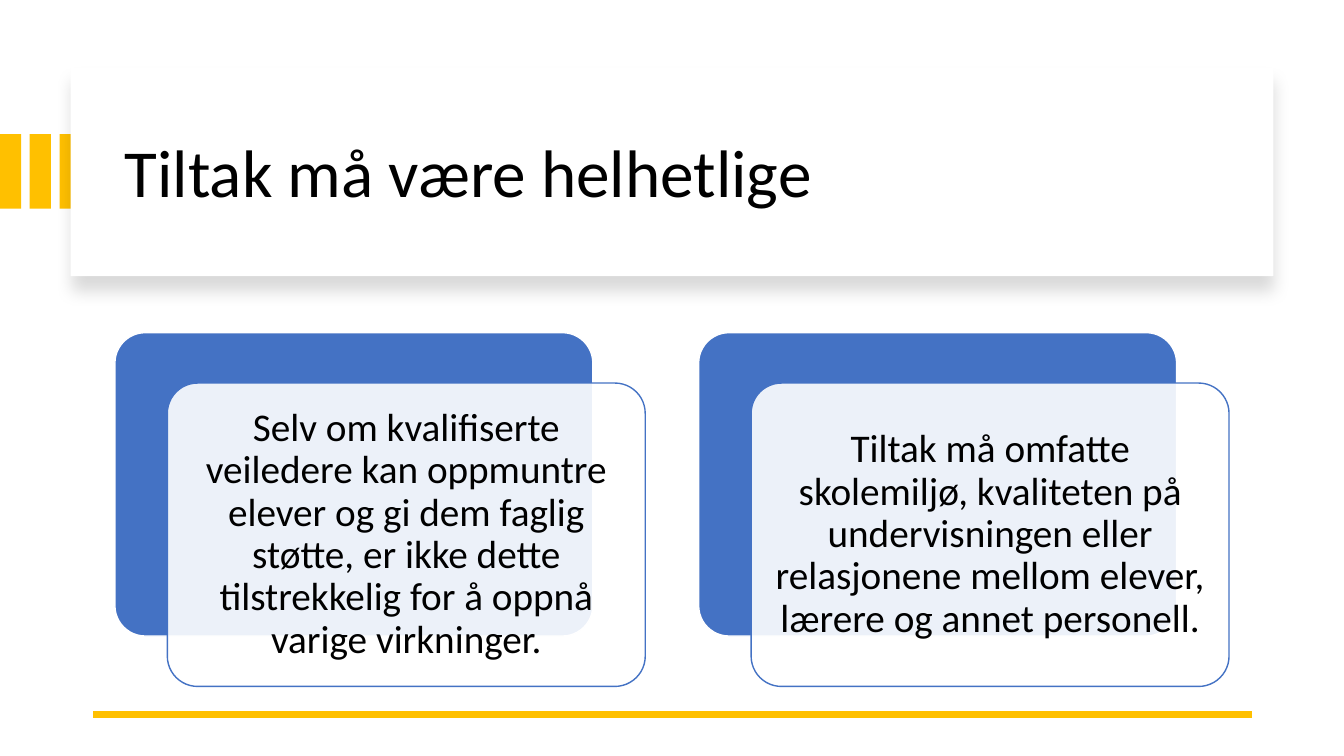
from lxml import etree
from pptx import Presentation
from pptx import util as u
from pptx.dml.color import RGBColor
from pptx.enum import shapes, text
from pptx.oxml import ns

THEME = {
    "gold": RGBColor.from_string("FFC000"),
    "blue": RGBColor.from_string("4472C4"),
    "white": RGBColor.from_string("FFFFFF"),
    "black": RGBColor.from_string("000000"),
    "font": "Calibri",
    "title": u.Pt(48),
    "body": u.Pt(28),
}
KIND = shapes.MSO_SHAPE
CARDS = [
    "Selv om kvalifiserte veiledere kan oppmuntre elever og gi dem faglig "
    "støtte, er ikke dette tilstrekkelig for å oppnå varige virkninger.",
    "Tiltak må omfatte skolemiljø, kvaliteten på undervisningen eller "
    "relasjonene mellom elever, lærere og annet personell.",
]

deck = Presentation()
deck.slide_width, deck.slide_height = u.Inches(13.33), u.Inches(7.5)
slide = deck.slides.add_slide(deck.slide_layouts[6])


def add_box(kind, box, fill, line=None):
    shape = slide.shapes.add_shape(kind, *map(u.Inches, box))
    shape.shadow.inherit = False
    shape.fill.solid()
    shape.fill.fore_color.rgb = THEME[fill]
    if line:
        shape.line.color.rgb = THEME[line]
        shape.line.width = u.Pt(1)
    else:
        shape.line.fill.background()
    if kind == KIND.ROUNDED_RECTANGLE:
        shape.adjustments[0] = 0.1
    return shape


def add_text(box, words, size, align, inset):
    frame = slide.shapes.add_textbox(*map(u.Inches, box)).text_frame
    form = {
        "word_wrap": True,
        "auto_size": text.MSO_AUTO_SIZE.NONE,
        "vertical_anchor": text.MSO_ANCHOR.MIDDLE,
        "margin_left": inset[0],
        "margin_right": inset[0],
        "margin_top": inset[1],
        "margin_bottom": inset[1],
    }
    for name, value in form.items():
        setattr(frame, name, value)
    para = frame.paragraphs[0]
    para.alignment, para.line_spacing = align, 0.9
    run = para.add_run()
    run.text = words
    for name, value in {"name": THEME["font"], "size": size}.items():
        setattr(run.font, name, value)
    run.font.color.rgb = THEME["black"]


# Gold bars run in behind the title panel
for i in range(3):
    add_box(KIND.RECTANGLE, (i * 0.295, 1.33, 0.21, 0.74), "gold")

panel = add_box(KIND.RECTANGLE, (0.7, 0.67, 11.93, 2.07), "white")
glow = panel._element.spPr.find(ns.qn("a:effectLst"))
shade = etree.SubElement(
    glow, ns.qn("a:outerShdw"), blurRad=str(u.Pt(11)), dist=str(u.Pt(10)),
    dir="5400000", algn="t", rotWithShape="0")
tint = etree.SubElement(shade, ns.qn("a:srgbClr"), val="000000")
etree.SubElement(tint, ns.qn("a:alpha"), val="15000")
add_text((1.14, 0.89, 11.13, 1.7), "Tiltak må være helhetlige",
         THEME["title"], text.PP_ALIGN.LEFT, (u.Inches(0.1), u.Inches(0.05)))

rule = slide.shapes.add_connector(
    shapes.MSO_CONNECTOR.STRAIGHT,
    u.Inches(12.42), u.Inches(7.09), u.Inches(0.92), u.Inches(7.09))
rule.line.color.rgb = THEME["gold"]
rule.line.width = u.Pt(4.5)
etree.SubElement(rule._element.spPr, ns.qn("a:effectLst"))

# Each card is a blue back plate with a translucent front plate
for i, words in enumerate(CARDS):
    left = 1.14 + i * 5.79
    add_box(KIND.ROUNDED_RECTANGLE, (left, 3.3, 4.74, 3.01), "blue", "white")
    front = add_box(KIND.ROUNDED_RECTANGLE, (left + 0.52, 3.8, 4.74, 3.01),
                    "white", "blue")
    color = front._element.spPr.find(ns.qn("a:solidFill"))[0]
    etree.SubElement(color, ns.qn("a:alpha"), val="90000")
    add_text((left + 0.61, 3.89, 4.56, 2.83), words, THEME["body"],
             text.PP_ALIGN.CENTER, (u.Inches(0.12), u.Inches(0.12)))

deck.save("out.pptx")
